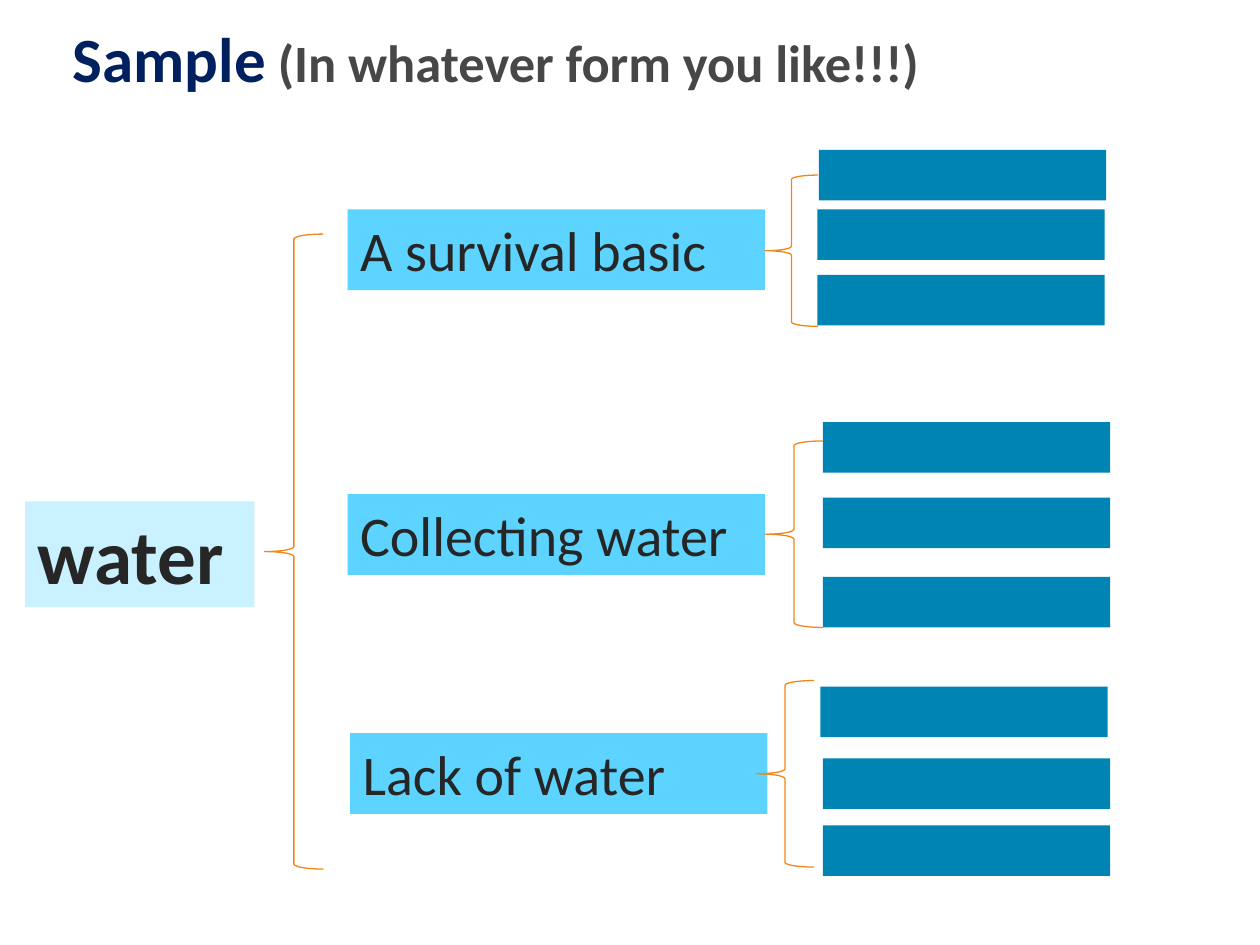
"""Build a brace map that splits the topic of water into three branches."""
from dataclasses import dataclass

from pptx import Presentation
from pptx.dml.color import RGBColor
from pptx.enum.shapes import MSO_SHAPE
from pptx.enum.text import MSO_ANCHOR, PP_ALIGN
from pptx.util import Cm, Pt


@dataclass(frozen=True)
class Theme:
    font: str = "Calibri"
    navy: str = "002060"
    gray: str = "474747"
    ink: str = "262626"
    root_fill: str = "C9F1FF"
    topic_fill: str = "5DD4FF"
    detail_fill: str = "0084B4"
    brace_line: str = "F48618"
    title_size: int = 36
    subtitle_size: int = 30
    root_size: int = 44
    topic_size: int = 32
    line_width: float = 0.75


theme = Theme()


def add_text(para, text, size, color, bold=False):
    para.alignment = PP_ALIGN.LEFT
    span = para.add_run()
    span.text = text
    span.font.name = theme.font
    span.font.size = Pt(size)
    span.font.bold = bold
    span.font.color.rgb = RGBColor.from_string(color)


def add_block(page, kind, bounds, fill=None, line=None):
    shape = page.shapes.add_shape(kind, *[Cm(length) for length in bounds])
    shape.shadow.inherit = False
    if fill:
        shape.fill.solid()
        shape.fill.fore_color.rgb = RGBColor.from_string(fill)
    else:
        shape.fill.background()
    if line:
        shape.line.color.rgb = RGBColor.from_string(line)
        shape.line.width = Pt(theme.line_width)
    else:
        shape.line.fill.background()
    shape.text_frame.word_wrap = True
    shape.text_frame.vertical_anchor = MSO_ANCHOR.TOP
    return shape


deck = Presentation()
deck.slide_width, deck.slide_height = Cm(25.4), Cm(19.05)
page = deck.slides.add_slide(deck.slide_layouts[6])

title = page.shapes.add_textbox(Cm(1.22), Cm(0.2), Cm(23.34), Cm(1.9))
title.text_frame.word_wrap = True
title.text_frame.vertical_anchor = MSO_ANCHOR.MIDDLE
heading = title.text_frame.paragraphs[0]
add_text(heading, "Sample", size=theme.title_size, color=theme.navy, bold=True)
add_text(heading, " (In whatever form you like!!!)",
         size=theme.subtitle_size, color=theme.gray, bold=True)

root = add_block(page, MSO_SHAPE.RECTANGLE, (0.51, 10.11, 4.62, 2.13), fill=theme.root_fill)
add_text(root.text_frame.paragraphs[0], "water",
         size=theme.root_size, color=theme.ink, bold=True)
add_block(page, MSO_SHAPE.LEFT_BRACE, (5.33, 4.72, 1.19, 12.8), line=theme.brace_line)

branches = [
    ("A survival basic", (7.01, 4.22), (15.42, 3.53, 1.07, 3.05),
     [(16.51, 3.02), (16.48, 4.22), (16.48, 5.54)]),
    ("Collecting water", (7.01, 9.96), (15.42, 8.89, 1.17, 3.76),
     [(16.59, 8.51), (16.59, 10.03), (16.59, 11.63)]),
    ("Lack of water", (7.06, 14.78), (15.24, 13.72, 1.17, 3.76),
     [(16.54, 13.84), (16.59, 15.29), (16.59, 16.64)]),
]
for label, corner, brace, details in branches:
    topic = add_block(page, MSO_SHAPE.RECTANGLE, (*corner, 8.41, 1.63), fill=theme.topic_fill)
    add_text(topic.text_frame.paragraphs[0], label, size=theme.topic_size, color=theme.ink)
    for detail in details:
        add_block(page, MSO_SHAPE.RECTANGLE, (*detail, 5.79, 1.02), fill=theme.detail_fill)
    add_block(page, MSO_SHAPE.LEFT_BRACE, brace, line=theme.brace_line)

deck.save("out.pptx")
